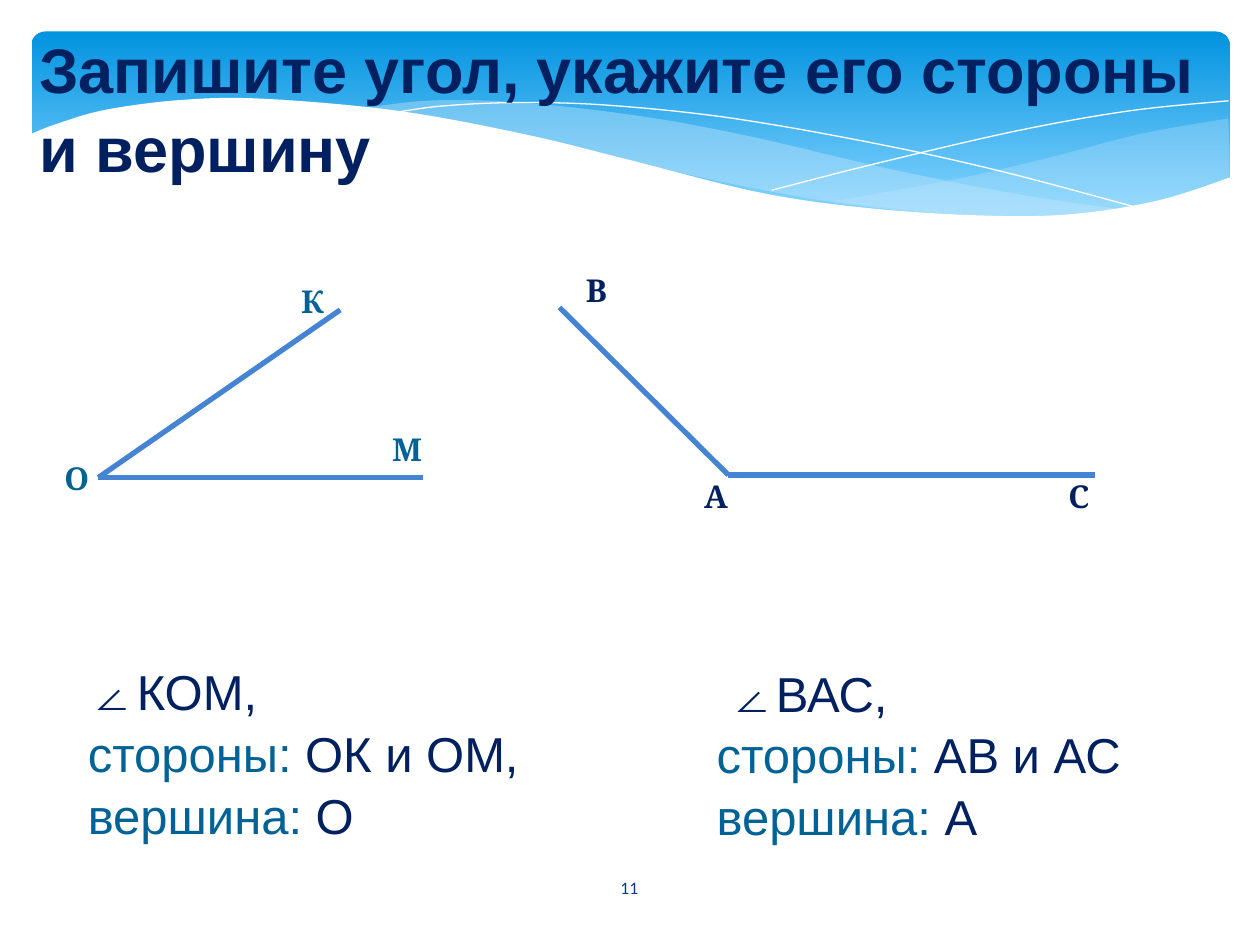
from dataclasses import dataclass

from lxml.etree import SubElement
from pptx import Presentation
from pptx.dml.color import RGBColor as Rgb
from pptx.enum.shapes import MSO_CONNECTOR as Conn, MSO_SHAPE as Kind
from pptx.enum.text import MSO_ANCHOR as Anchor, PP_ALIGN as Align
from pptx.oxml.ns import qn
from pptx.util import Pt

NAVY, TEAL, BLUE, PALE, WHITE = "002060", "016296", "4584D3", "C6E7FC", "FFFFFF"
Point = tuple[float, float]
Part = tuple[str, str]


@dataclass
class Label:
    text: str
    left: float
    top: float


@dataclass
class Angle:
    apex: Point
    ends: list[Point]
    labels: list[Label]
    color: str


@dataclass
class Answer:
    left: float
    top: float
    width: float
    indent: float
    name: str
    sides: str
    apex: str


def tint(color: str) -> Rgb:
    return Rgb.from_string(color)


def smooth(keys: list[Point], steps: int = 8) -> list[Point]:
    """Points of a Catmull-Rom curve through the keys."""
    pad = [keys[0], *keys, keys[-1]]
    out = [keys[0]]
    for a, b, c, d in zip(pad, pad[1:], pad[2:], pad[3:]):
        for t in (n / steps for n in range(1, steps + 1)):
            out.append(tuple(
                0.5 * (2 * q + (r - p) * t + (2 * p - 5 * q + 4 * r - s) * t**2
                       + (3 * q - p - 3 * r + s) * t**3)
                for p, q, r, s in zip(a, b, c, d)))
    return out


def trace(shapes, points: list[Point], close: bool):
    dots = [(Pt(x), Pt(y)) for x, y in points]
    pen = shapes.build_freeform(*dots[0], scale=1.0)
    pen.add_line_segments(dots[1:], close=close)
    shape = pen.convert_to_shape()
    shape.shadow.inherit = False
    return shape


def area(shapes, points: list[Point], color: str, alpha: int = 100) -> None:
    shape = trace(shapes, points, True)
    shape.fill.solid()
    shape.fill.fore_color.rgb = tint(color)
    shape.line.fill.background()
    if alpha < 100:
        node = shape.fill._xPr.find(".//" + qn("a:srgbClr"))
        SubElement(node, qn("a:alpha")).set("val", str(alpha * 1000))


def strand(shapes, points: list[Point]) -> None:
    shape = trace(shapes, points, False)
    shape.fill.background()
    shape.line.color.rgb = tint(WHITE)
    shape.line.width = Pt(0)


def ray(shapes, start: Point, end: Point) -> None:
    line = shapes.add_connector(Conn.STRAIGHT, *map(Pt, start + end))
    line.line.color.rgb = tint(BLUE)
    line.line.width = Pt(3)
    SubElement(line._element.spPr, qn("a:effectLst"))


def write(para, parts: list[Part], font: str, size: float, bold: bool = False) -> None:
    style = {"name": font, "size": Pt(size), "bold": bold}
    for text, color in parts:
        run = para.add_run()
        run.text = text
        for key, value in style.items():
            setattr(run.font, key, value)
        run.font.color.rgb = tint(color)


def text_box(shapes, left: float, top: float, width: float, height: float, wrap: bool = True):
    frame = shapes.add_textbox(*map(Pt, (left, top, width, height))).text_frame
    frame.word_wrap = wrap
    return frame


def draw_angle(shapes, angle: Angle) -> None:
    for end in angle.ends:
        ray(shapes, angle.apex, end)
    for label in angle.labels:
        frame = text_box(shapes, label.left, label.top, 27, 28.8, wrap=False)
        para = frame.paragraphs[0]
        para.alignment = Align.CENTER
        write(para, [(label.text, angle.color)], "Cambria", 18, True)


def draw_answer(shapes, item: Answer) -> None:
    frame = text_box(shapes, item.left, item.top, item.width, 108.7)
    rows = [
        (item.indent, [(item.name, NAVY)]),
        (28, [("стороны: ", TEAL), (item.sides, NAVY)]),
        (28, [("вершина: ", TEAL), (item.apex, NAVY)]),
    ]
    for n, (indent, parts) in enumerate(rows):
        para = frame.add_paragraph() if n else frame.paragraphs[0]
        para.line_spacing = 1.05
        para._p.get_or_add_pPr().set("indent", str(Pt(indent)))
        write(para, parts, "Arial", 28)


# Wave outlines
RIGHT_TOP = [(702, 67.7), (652, 76.5), (596, 91), (543, 103), (476, 115)]
RIGHT_LOW = [(476, 115), (536, 121.7), (593, 124), (640, 120.5), (678, 111), (702.7, 101.5)]
MID_TOP = [(643, 120), (581, 110.9), (508, 96.5), (431, 78.5), (370, 67), (302, 59),
           (248, 57.4), (206, 62)]
MID_LOW = [(206, 62), (261, 70), (323, 83), (408, 103), (479, 116), (539, 122.4),
           (596, 124.6), (643, 120)]
LONG = [(222.5, 64.8), (254, 60.5), (300, 58.6), (352, 60.5), (419, 67.7), (500, 82),
        (572, 97.9), (653, 119.5)]
CROSS = [(441, 108.7), (500, 93.6), (580, 75), (645, 63.4), (702, 57.6)]
EDGE = [(703.4, 101.2), (662, 114.5), (612, 122.4), (560, 123.1), (495, 118.8),
        (434, 110), (362, 92), (301, 77), (228, 63.4), (152, 56.5), (105, 57),
        (61, 62.6), (33, 70.6), (16.6, 77)]

ANGLES = [
    Angle((56.2, 272.9), [(242, 272.9), (194.4, 177.1)],
          [Label("М", 217, 242), Label("О", 29.7, 259), Label("К", 165, 157.7)], TEAL),
    Angle((416.2, 271.4), [(625.7, 271.4), (319.7, 175.7)],
          [Label("А", 395.2, 269.3), Label("В", 327.4, 151.2), Label("С", 603, 269.3)], NAVY),
]
ANSWERS = [
    Answer(15.1, 373, 365.8, 28, "∠КОМ,", "ОК и ОМ,", "О"),
    Answer(374.4, 373.7, 331.9, 34, "∠ВАС,", "АВ и АС", "А"),
]


def main() -> None:
    deck = Presentation()
    deck.slide_width, deck.slide_height = Pt(720), Pt(540)
    slide = deck.slides.add_slide(deck.slide_layouts[5])
    shapes = slide.shapes

    # Blue banner
    banner = shapes.add_shape(Kind.ROUNDED_RECTANGLE, *map(Pt, (18, 18, 684.7, 112.3)))
    banner.adjustments[0] = 0.07
    banner.shadow.inherit = False
    banner.line.fill.background()
    banner.fill.gradient()
    banner.fill.gradient_angle = 270
    for stop, color, place in zip(banner.fill.gradient_stops, ("0293E0", "83D3FE"), (0, 0.9)):
        stop.color.rgb = tint(color)
        stop.position = place

    # Waves over the banner
    area(shapes, smooth(RIGHT_TOP) + smooth(RIGHT_LOW), PALE, 29)
    area(shapes, smooth(MID_TOP) + smooth(MID_LOW), PALE, 40)
    strand(shapes, smooth(LONG))
    strand(shapes, smooth(CROSS))
    area(shapes, smooth(EDGE) + [(16.6, 161), (703.4, 161)], WHITE)

    # Angles and answers
    for angle in ANGLES:
        draw_angle(shapes, angle)
    for item in ANSWERS:
        draw_answer(shapes, item)

    # Title, brought in front of the banner
    title = shapes.title
    place = {"left": 15.1, "top": 11.5, "width": 696.2, "height": 94.3}
    for key, value in place.items():
        setattr(title, key, Pt(value))
    title.text_frame.vertical_anchor = Anchor.TOP
    para = title.text_frame.paragraphs[0]
    para.alignment = Align.LEFT
    para.line_spacing = 1.05
    write(para, [("Запишите угол, укажите его стороны и вершину", NAVY)], "Arial", 36, True)
    shapes._spTree.append(title._element)

    # Page number
    frame = text_box(shapes, 313.9, 492.5, 91.4, 28.8)
    frame.vertical_anchor = Anchor.MIDDLE
    frame.paragraphs[0].alignment = Align.CENTER
    write(frame.paragraphs[0], [("11", "073E87")], "Calibri", 10)

    deck.save("out.pptx")


if __name__ == "__main__":
    main()
